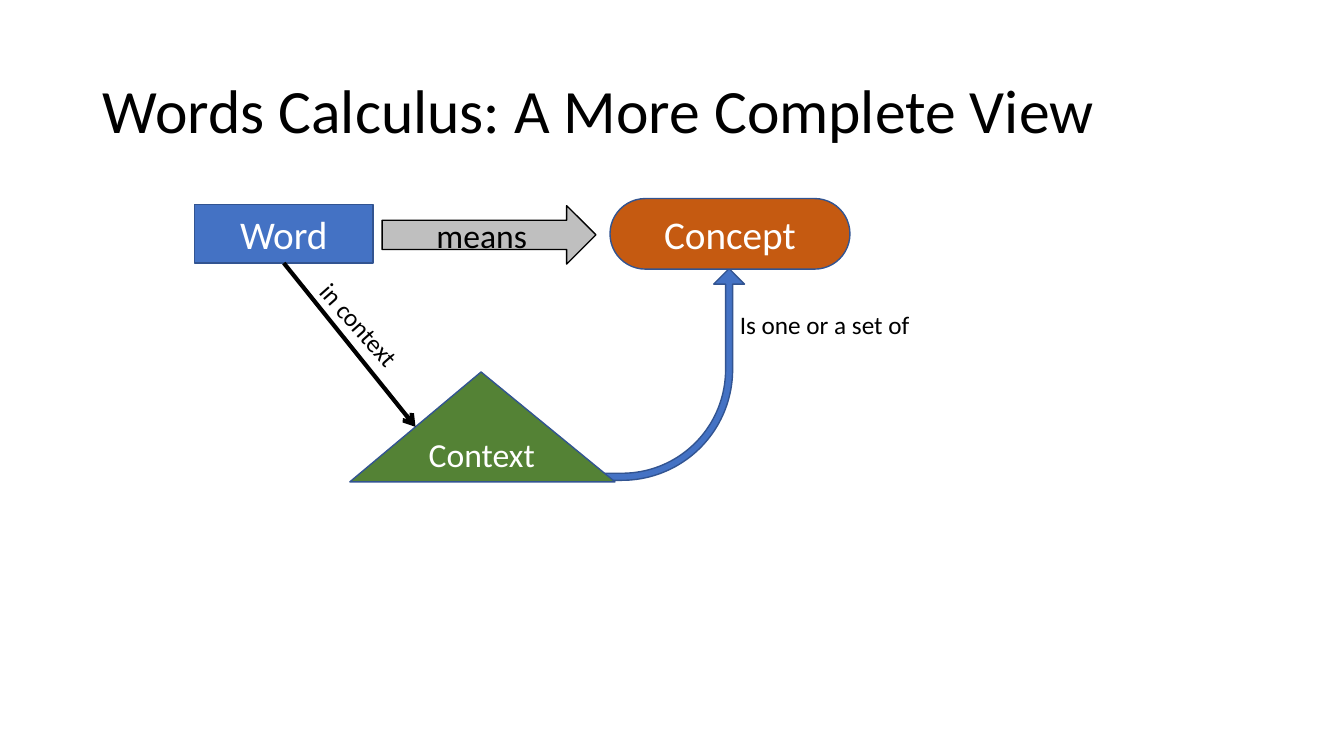
import pptx
import pptx.util
import pptx.dml.color
import pptx.enum.shapes
import pptx.enum.text
import pptx.oxml
import pptx.oxml.ns

Inches, Pt = pptx.util.Inches, pptx.util.Pt
SHAPE = pptx.enum.shapes.MSO_SHAPE
ANCHOR = pptx.enum.text.MSO_ANCHOR
ALIGN = pptx.enum.text.PP_ALIGN
AUTO_SIZE = pptx.enum.text.MSO_AUTO_SIZE

COLORS = {
    "black": "000000", "white": "FFFFFF", "blue": "4472C4", "outline": "325491",
    "green": "548235", "gray": "BFBFBF", "orange": "C55A11",
}
FONT = "Calibri"
TITLE = "Words Calculus: A More Complete View"

# text, preset, (left, top, width, height), adjustments, fill, line, text colour, size
NODES = [
    ("Word", SHAPE.RECTANGLE, (1.93, 2.03, 1.77, 0.58), [], "blue", "outline", "white", 28),
    ("Context", SHAPE.ISOSCELES_TRIANGLE, (3.47, 3.69, 2.63, 1.09), [0.495],
     "green", "outline", "white", 24),
    ("means", SHAPE.RIGHT_ARROW, (3.79, 2.04, 2.12, 0.58), [], "gray", "black", "black", 24),
    ("Concept", SHAPE.ROUNDED_RECTANGLE, (6.05, 1.97, 2.38, 0.7), [0.5],
     "orange", "outline", "white", 28),
]
# text, (left, top, width, height), rotation
LABELS = [
    ("in context", (2.96, 3.03, 1.22, 0.4), 48.4),
    ("Is one or a set of", (7.24, 3.02, 1.9, 0.4), 0),
]
LABEL_SIZE = 18
BENT_ARROW_BOX = (5.62, 3, 2.1, 1.43)
BENT_ARROW_ADJUSTMENTS = [0.049, 0.107, 0.107, 0.768]


def rgb(name):
    return pptx.dml.color.RGBColor.from_string(COLORS[name])


def write(frame, text, size, color, align):
    paragraph = frame.paragraphs[0]
    paragraph.alignment = align
    run = paragraph.add_run()
    run.text = text
    run.font.name = FONT
    run.font.size = Pt(size)
    run.font.color.rgb = rgb(color)
    return paragraph


def add_preset(slide, preset, box, adjustments, fill, line):
    shape = slide.shapes.add_shape(preset, *map(Inches, box))
    shape.shadow.inherit = False
    for index, value in enumerate(adjustments):
        shape.adjustments[index] = value
    shape.fill.solid()
    shape.fill.fore_color.rgb = rgb(fill)
    shape.line.color.rgb = rgb(line)
    shape.line.width = Pt(1)
    return shape


def add_title(slide):
    title = slide.shapes.title
    title.left, title.top, title.width, title.height = map(Inches, (0.92, 0.4, 11.5, 1.45))
    frame = title.text_frame
    frame.auto_size = AUTO_SIZE.NONE
    frame.vertical_anchor = ANCHOR.MIDDLE
    write(frame, TITLE, 44, "black", ALIGN.LEFT).line_spacing = 0.9


def add_bent_arrow(slide):
    arrow = add_preset(slide, SHAPE.BENT_ARROW, BENT_ARROW_BOX, BENT_ARROW_ADJUSTMENTS,
                       "blue", "outline")
    arrow.rotation = 90
    arrow._element.spPr.find(pptx.oxml.ns.qn("a:xfrm")).set("flipH", "1")


def add_context_link(slide, word, context):
    """Arrow from the bottom of the word to the middle of the triangle's left side."""
    link = slide.shapes.add_connector(pptx.enum.shapes.MSO_CONNECTOR.STRAIGHT, 0, 0, 0, 0)
    link.begin_connect(word, 2)
    link.end_connect(context, 1)
    link.end_x = context.left + int(context.width * context.adjustments[0] / 2)
    link.end_y = context.top + context.height // 2
    link.line.color.rgb = rgb("black")
    link.line.width = Pt(3)
    namespace = pptx.oxml.ns.nsdecls("a")
    link.line._get_or_add_ln().append(
        pptx.oxml.parse_xml(f'<a:tailEnd {namespace} type="arrow"/>'))
    link._element.spPr.append(pptx.oxml.parse_xml(f"<a:effectLst {namespace}/>"))


def add_label(slide, text, box, rotation):
    label = slide.shapes.add_textbox(*map(Inches, box))
    label.rotation = rotation
    label.text_frame.word_wrap = False
    label.text_frame.auto_size = AUTO_SIZE.SHAPE_TO_FIT_TEXT
    write(label.text_frame, text, LABEL_SIZE, "black", ALIGN.LEFT)


def main():
    deck = pptx.Presentation()
    deck.slide_width, deck.slide_height = Inches(13.33), Inches(7.5)
    slide = deck.slides.add_slide(deck.slide_layouts.get_by_name("Title Only"))
    add_title(slide)
    add_bent_arrow(slide)
    nodes = {}
    for text, preset, box, adjustments, fill, line, color, size in NODES:
        node = add_preset(slide, preset, box, adjustments, fill, line)
        node.text_frame.vertical_anchor = ANCHOR.MIDDLE
        write(node.text_frame, text, size, color, ALIGN.CENTER)
        nodes[text] = node
    add_context_link(slide, nodes["Word"], nodes["Context"])
    for label in LABELS:
        add_label(slide, *label)
    deck.save("out.pptx")


if __name__ == "__main__":
    main()
